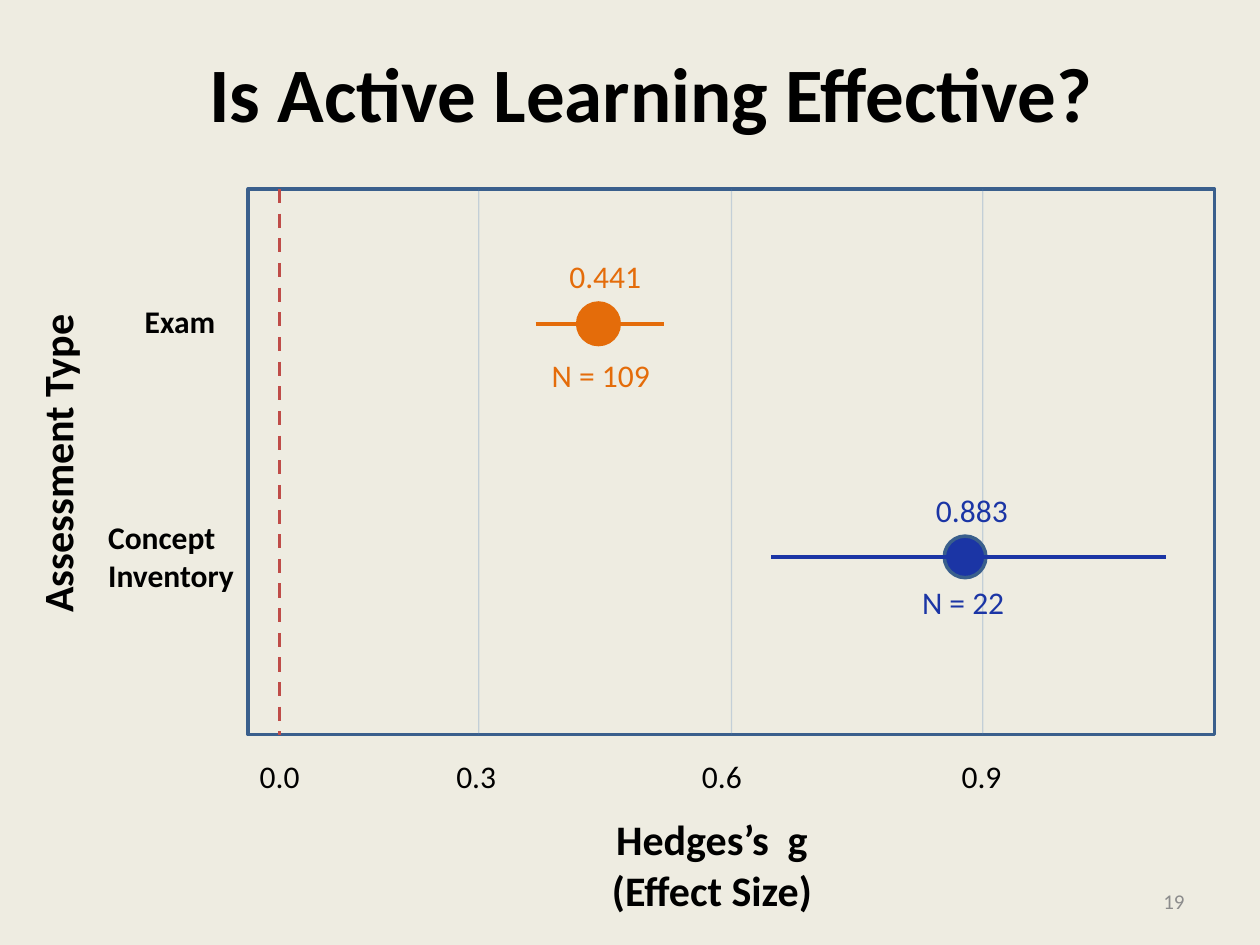
from dataclasses import dataclass

from lxml import etree
from pptx import Presentation
from pptx.dml.color import RGBColor
from pptx.enum import dml, shapes, text
from pptx.oxml.ns import qn
from pptx.util import Inches, Pt


@dataclass(frozen=True)
class Theme:
    font: str = "Calibri"
    back: str = "EEECE1"
    ink: str = "000000"
    gray: str = "8C8C8C"
    frame: str = "3A5F8C"
    grid: str = "4B7EBC"
    zero: str = "BF4C48"
    exam: str = "E46C0A"
    concept: str = "1B35A5"
    title: int = 44
    axis: int = 24
    label: int = 18
    small: int = 12


@dataclass(frozen=True)
class Box:
    left: float
    top: float
    width: float
    height: float

    def place(self) -> tuple:
        return tuple(map(Inches, (self.left, self.top, self.width, self.height)))


@dataclass(frozen=True)
class Effect:
    """One study group: its mean, its interval and its two captions."""
    value: str
    count: str
    mid: float
    low: float
    high: float
    y: float
    color: str
    edge: str
    above: Box
    below: Box


@dataclass(frozen=True)
class Tick:
    label: str
    x: float


T = Theme()
PLOT = Box(1.97, 1.5, 7.67, 4.33)
BASE = PLOT.top + PLOT.height
ZERO = 2.22
GRID = (3.8, 7.8)
DOT = 0.33
TICKS = (Tick("0.0", 2.22), Tick("0.3", 3.78), Tick("0.6", 5.73), Tick("0.9", 7.79))
EFFECTS = (
    Effect("0.883", "N = 22", 7.66, 6.12, 9.25, 4.42, T.concept, T.frame,
           Box(7.33, 3.85, 0.78, 0.4), Box(7.22, 4.58, 0.86, 0.4)),
    Effect("0.441", "N = 109", 4.75, 4.25, 5.27, 2.57, T.exam, T.exam,
           Box(4.42, 1.99, 0.78, 0.4), Box(4.28, 2.78, 0.99, 0.4)),
)


def rgb(code: str) -> RGBColor:
    return RGBColor.from_string(code)


def write(frame, words: str, *, size: int = T.label, color: str = T.ink,
          bold: bool = False, align=text.PP_ALIGN.LEFT,
          anchor=text.MSO_ANCHOR.TOP, wrap: bool = False) -> None:
    frame.text = words
    frame.word_wrap = wrap
    frame.vertical_anchor = anchor
    for par in frame.paragraphs:
        par.alignment = align
        for run in par.runs:
            run.font.name = T.font
            run.font.size = Pt(size)
            run.font.bold = bold
            run.font.color.rgb = rgb(color)


def label(slide, box: Box, words: str, *, turn: float = 0, **form) -> None:
    shape = slide.shapes.add_textbox(*box.place())
    shape.rotation = turn
    write(shape.text_frame, words, **form)


def rule(slide, start: tuple, end: tuple, color: str, width: float, *,
         dash=None, alpha: int = 100):
    """Draw a straight line without shadow; alpha is in percent."""
    line = slide.shapes.add_connector(
        shapes.MSO_CONNECTOR.STRAIGHT, *map(Inches, start + end))
    line.line.color.rgb = rgb(color)
    line.line.width = Pt(width)
    if dash:
        line.line.dash_style = dash
    props = line._element.spPr
    if alpha < 100:
        tone = next(props.iter(qn("a:srgbClr")))
        etree.SubElement(tone, qn("a:alpha")).set("val", str(alpha * 1000))
    etree.SubElement(props, qn("a:effectLst"))
    return line


def outline(slide, kind, box: Box, edge: str, fill: str | None = None):
    shape = slide.shapes.add_shape(kind, *box.place())
    shape.shadow.inherit = False
    if fill:
        shape.fill.solid()
        shape.fill.fore_color.rgb = rgb(fill)
    else:
        shape.fill.background()
    shape.line.color.rgb = rgb(edge)
    shape.line.width = Pt(2)
    return shape


def upright(slide, x: float, color: str, width: float, **form):
    return rule(slide, (x, PLOT.top), (x, BASE), color, width, **form)


def plot(slide) -> None:
    frame = outline(slide, shapes.MSO_SHAPE.RECTANGLE, PLOT, T.frame)
    for x in GRID:
        upright(slide, x, T.grid, 0.75, alpha=25)
    mid = upright(slide, PLOT.left + PLOT.width / 2, T.grid, 0.75, alpha=25)
    mid.begin_connect(frame, 0)
    mid.end_connect(frame, 2)
    upright(slide, ZERO, T.zero, 2, dash=dml.MSO_LINE.DASH)
    for tick in TICKS:
        label(slide, Box(tick.x - 0.3, 5.96, 0.6, 0.4), tick.label,
              align=text.PP_ALIGN.CENTER)


def draw(slide, item: Effect) -> None:
    dot = Box(item.mid - DOT / 2, item.y - DOT / 2, DOT, DOT)
    outline(slide, shapes.MSO_SHAPE.OVAL, dot, item.edge, item.color)
    rule(slide, (item.low, item.y), (item.high, item.y), item.color, 2.5)
    label(slide, item.below, item.count, color=item.color)
    label(slide, item.above, item.value, color=item.color)


def main() -> None:
    deck = Presentation()
    deck.slide_width, deck.slide_height = Inches(10), Inches(7.5)
    slide = deck.slides.add_slide(deck.slide_layouts[5])
    slide.background.fill.solid()
    slide.background.fill.fore_color.rgb = rgb(T.back)

    title = slide.shapes.title
    title.left, title.top, title.width, title.height = Box(0.67, 0.1, 9, 1.25).place()
    write(title.text_frame, "Is Active Learning Effective?", size=T.title, bold=True,
          align=text.PP_ALIGN.CENTER, anchor=text.MSO_ANCHOR.MIDDLE, wrap=True)

    plot(slide)
    label(slide, Box(1.05, 2.35, 0.82, 0.4), "Exam", bold=True)
    label(slide, Box(0.76, 4.06, 1.21, 0.71), "Concept\nInventory", bold=True)
    label(slide, Box(4.74, 6.41, 1.82, 0.91), "Hedges’s  g\n(Effect Size)",
          size=T.axis, bold=True, align=text.PP_ALIGN.CENTER)
    label(slide, Box(-0.85, 3.41, 2.6, 0.5), "Assessment Type",
          turn=270, size=T.axis, bold=True)
    for item in EFFECTS:
        draw(slide, item)
    label(slide, Box(7.17, 6.95, 2.33, 0.4), "19", size=T.small, color=T.gray,
          align=text.PP_ALIGN.RIGHT, anchor=text.MSO_ANCHOR.MIDDLE, wrap=True)
    deck.save("out.pptx")


if __name__ == "__main__":
    main()
